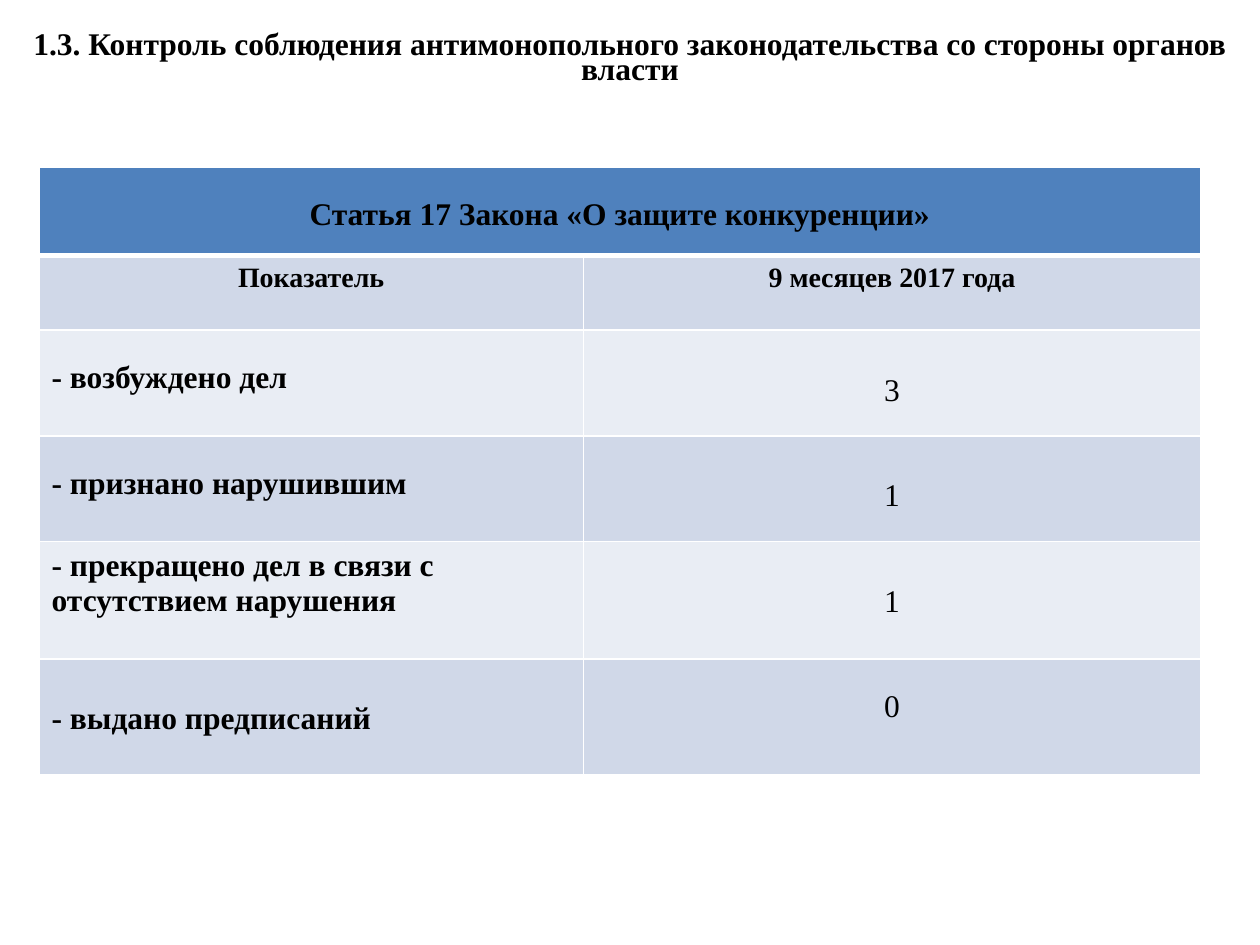
from lxml.etree import SubElement
from pptx import Presentation
from pptx.dml.color import RGBColor
from pptx.enum.text import MSO_AUTO_SIZE as AutoSize, PP_ALIGN as Align
from pptx.oxml.ns import qn
from pptx.util import Inches, Pt

HEADER_FILL = "4F81BD"
BAND_FILLS = ("D0D8E8", "E9EDF4")
SINGLE_DROP, TIGHT_DROP, NO_DROP = 0.34, 0.24, 0.05
INDICATORS = [
    ("- возбуждено дел", TIGHT_DROP, "3", SINGLE_DROP),
    ("- признано нарушившим", TIGHT_DROP, "1", SINGLE_DROP),
    ("- прекращено дел в связи с отсутствием нарушения", NO_DROP, "1", SINGLE_DROP),
    ("- выдано предписаний", SINGLE_DROP, "0", TIGHT_DROP),
]
COLUMN_WIDTHS = (4.32, 4.9)
ROW_HEIGHTS = (0.7, 0.59, 0.84, 0.84, 0.93, 0.92)


def color(value):
    return RGBColor.from_string(value)


def write(frame, text, size=18, bold=True, align=Align.CENTER, spacing=None):
    frame.word_wrap = True
    line = frame.paragraphs[0]
    line.alignment = align
    line.line_spacing = spacing
    run = line.add_run()
    run.text = text
    run.font.name = "Times New Roman"
    run.font.size = Pt(size)
    run.font.bold = bold
    run.font.color.rgb = color("000000")


def style_cell(cell, fill, top=1, bottom=1):
    properties = cell._tc.get_or_add_tcPr()
    for side, width in (("L", 1), ("R", 1), ("T", top), ("B", bottom)):
        border = SubElement(properties, qn(f"a:ln{side}"), w=str(Pt(width)))
        solid = SubElement(border, qn("a:solidFill"))
        SubElement(solid, qn("a:srgbClr"), val="FFFFFF")
    cell.fill.solid()
    cell.fill.fore_color.rgb = color(fill)


def fill_cell(cell, text, drop=NO_DROP, **text_format):
    cell.margin_top = Inches(drop)
    write(cell.text_frame, text, **text_format)


def add_heading(slide, text):
    heading = slide.shapes.add_textbox(Inches(0), Inches(0.23), Inches(10), Inches(0.5))
    heading.text_frame.auto_size = AutoSize.SHAPE_TO_FIT_TEXT
    write(heading.text_frame, text, spacing=0.66)


def add_indicator_table(slide):
    table = slide.shapes.add_table(
        len(ROW_HEIGHTS), len(COLUMN_WIDTHS), Inches(0.31), Inches(1.33),
        Inches(sum(COLUMN_WIDTHS)), Inches(sum(ROW_HEIGHTS))).table
    for column, width in zip(table.columns, COLUMN_WIDTHS):
        column.width = Inches(width)
    for index, (row, height) in enumerate(zip(table.rows, ROW_HEIGHTS)):
        row.height = Inches(height)
        for cell in row.cells:
            if index == 0:
                style_cell(cell, HEADER_FILL, bottom=3)
            else:
                style_cell(cell, BAND_FILLS[(index - 1) % 2], top=3 if index == 1 else 1)

    table.cell(0, 0).merge(table.cell(0, 1))
    fill_cell(table.cell(0, 0), "Статья 17 Закона «О защите конкуренции»", TIGHT_DROP)
    for column, caption in enumerate(("Показатель", "9 месяцев 2017 года")):
        fill_cell(table.cell(1, column), caption, size=16)
    for row, (label, label_drop, count, count_drop) in enumerate(INDICATORS, start=2):
        fill_cell(table.cell(row, 0), label, label_drop, align=Align.LEFT)
        fill_cell(table.cell(row, 1), count, count_drop, bold=False)


def main():
    deck = Presentation()
    deck.slide_width, deck.slide_height = Inches(10), Inches(7.5)
    slide = deck.slides.add_slide(deck.slide_layouts[6])
    add_indicator_table(slide)
    add_heading(slide, "1.3. Контроль соблюдения антимонопольного законодательства "
                       "со стороны органов власти")
    deck.save("out.pptx")


if __name__ == "__main__":
    main()
